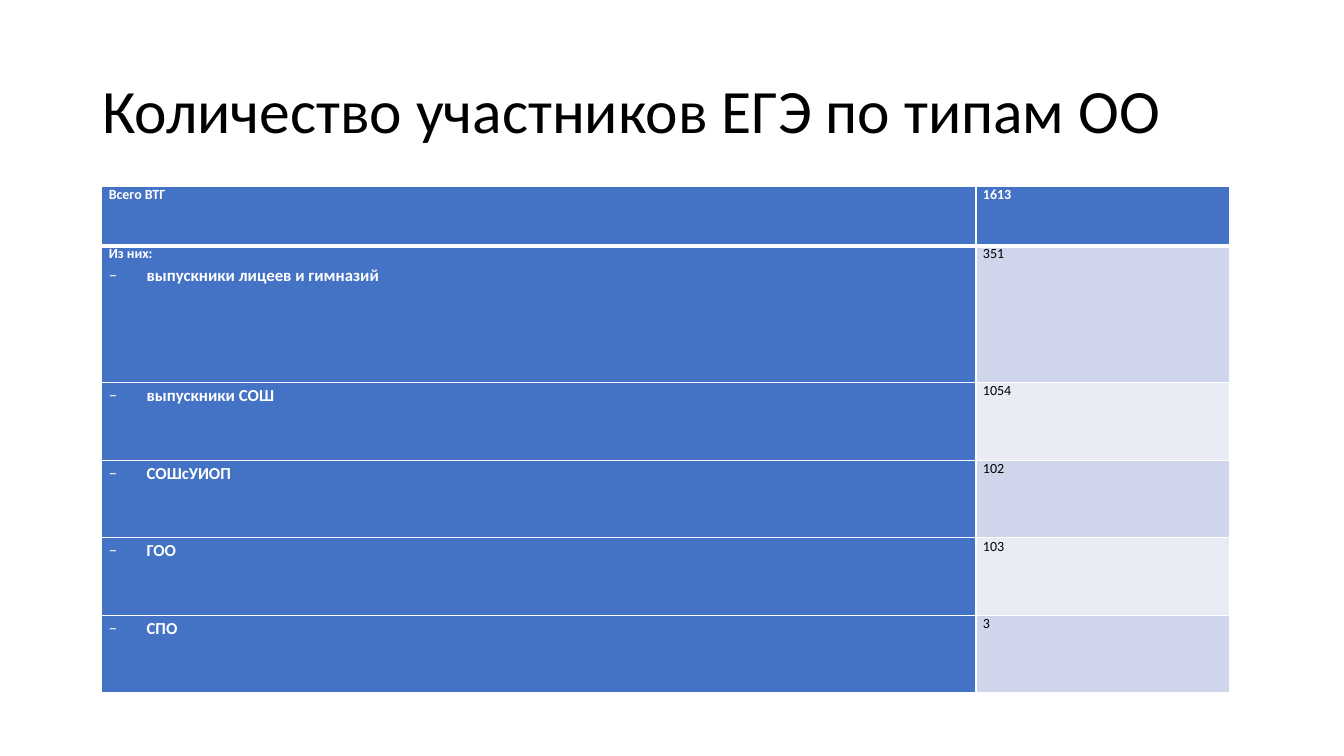
from dataclasses import dataclass

from lxml import etree
from pptx import Presentation
from pptx import util as u
from pptx.dml import color
from pptx.enum import text
from pptx.oxml import ns

Pt = u.Pt


@dataclass(frozen=True)
class Theme:
    font: str = "Calibri"
    ink: str = "000000"
    white: str = "FFFFFF"
    blue: str = "4472C4"
    bands: tuple = ("CFD5EA", "E9EBF5")
    title: int = 44
    body: int = 10
    item: int = 12


THEME = Theme()
ROWS = [
    (42.5, ["Всего ВТГ"], "1613"),
    (97.9, ["Из них:", "− выпускники лицеев и гимназий"], "351"),
    (55.4, ["− выпускники СОШ"], "1054"),
    (55.4, ["− СОШсУИОП"], "102"),
    (55.4, ["− ГОО"], "103"),
    (55.4, ["− СПО"], "3"),
]


def put(obj, vals):
    for name, val in vals.items():
        setattr(obj, name, val)


def write(par, words, size, ink, bold=False):
    run = par.add_run()
    run.text = words
    put(run.font, {"name": THEME.font, "size": Pt(size), "bold": bold})
    run.font.color.rgb = color.RGBColor.from_string(ink)


def mark(par, sign):
    props = par._p.get_or_add_pPr()
    props.set("marL", str(Pt(27)))
    props.set("indent", str(Pt(-27)))
    etree.SubElement(props, ns.qn("a:buFont"), typeface=THEME.font)
    etree.SubElement(props, ns.qn("a:buChar"), char=sign)


def edge(cell, widths):
    props = cell._tc.get_or_add_tcPr()
    for spot, (side, width) in enumerate(widths.items()):
        line = etree.Element(ns.qn("a:ln" + side), w=str(Pt(width)))
        fill = etree.SubElement(line, ns.qn("a:solidFill"))
        etree.SubElement(fill, ns.qn("a:srgbClr"), val=THEME.white)
        props.insert(spot, line)


def style(cell, lines, fill, ink, bold, widths):
    put(cell, {"margin_left": Pt(5), "margin_right": Pt(5),
               "margin_top": 0, "margin_bottom": 0})
    cell.fill.solid()
    cell.fill.fore_color.rgb = color.RGBColor.from_string(fill)
    edge(cell, widths)
    frame = cell.text_frame
    for num, words in enumerate(lines):
        par = frame.add_paragraph() if num else frame.paragraphs[0]
        par.alignment = text.PP_ALIGN.JUSTIFY
        size = THEME.body
        if words.startswith("− "):
            par.line_spacing = 1.15
            mark(par, words[0])
            words, size = words[2:], THEME.item
        write(par, words, size, ink, bold)


def head(slide, box, words):
    frame = slide.shapes.add_textbox(*map(Pt, box)).text_frame
    put(frame, {"word_wrap": True, "vertical_anchor": text.MSO_ANCHOR.MIDDLE})
    par = frame.paragraphs[0]
    par.line_spacing = 0.9
    write(par, words, THEME.title, THEME.ink)


def grid(slide, box, rows):
    table = slide.shapes.add_table(len(rows), 2, *map(Pt, box)).table
    wide = box[2] * 0.775
    for col, width in zip(table.columns, (wide, box[2] - wide)):
        col.width = Pt(width)
    for num, (high, lines, count) in enumerate(rows):
        table.rows[num].height = Pt(high)
        widths = {"L": 1, "R": 1, "T": 3 if num == 1 else 1,
                  "B": 3 if num == 0 else 1}
        style(table.cell(num, 0), lines, THEME.blue, THEME.white, True, widths)
        top = num == 0
        fill = THEME.blue if top else THEME.bands[(num - 1) % 2]
        ink = THEME.white if top else THEME.ink
        style(table.cell(num, 1), [count], fill, ink, top, widths)


def main():
    deck = Presentation()
    put(deck, {"slide_width": Pt(960), "slide_height": Pt(540)})
    slide = deck.slides.add_slide(deck.slide_layouts[6])
    head(slide, (66, 28.8, 828, 104.4), "Количество участников ЕГЭ по типам ОО")
    grid(slide, (72.7, 133, 805.7, sum(row[0] for row in ROWS)), ROWS)
    deck.save("out.pptx")


if __name__ == "__main__":
    main()
